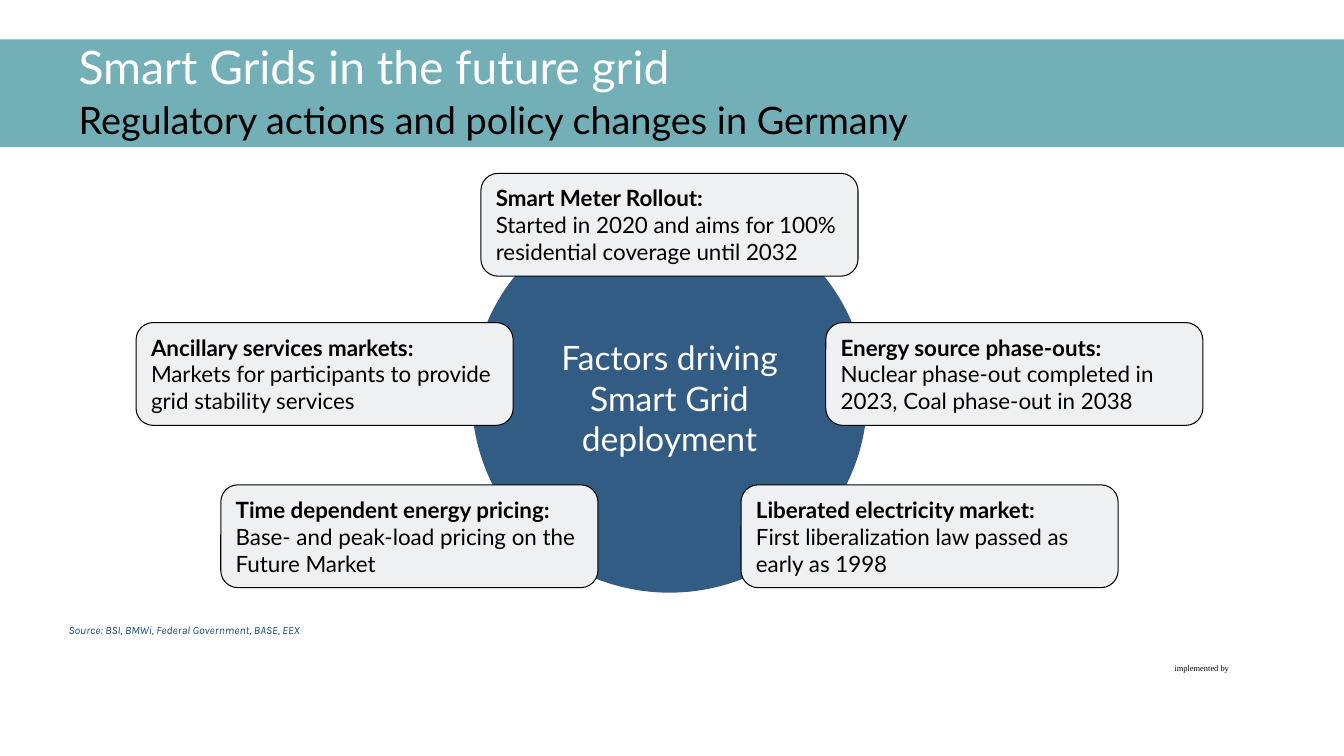
"""Build the slide on the factors driving Smart Grid deployment in Germany."""
import pptx
import pptx.dml.color
import pptx.enum.shapes
import pptx.enum.text
import pptx.util

Inches, Pt = pptx.util.Inches, pptx.util.Pt
SHAPES = pptx.enum.shapes.MSO_SHAPE
ALIGN = pptx.enum.text.PP_ALIGN
MIDDLE = pptx.enum.text.MSO_ANCHOR.MIDDLE
TOP = pptx.enum.text.MSO_ANCHOR.TOP

TITLE = "Smart Grids in the future grid"
SUBTITLE = "Regulatory actions and policy changes in Germany"
HUB = "Factors driving Smart Grid deployment"
SOURCE = "Source: BSI, BMWi, Federal Government, BASE, EEX"
FOOTER = "implemented by"

CENTER_X = 6.64
CARD_WIDTH, CARD_HEIGHT = 3.74, 1.02
CARDS = [
    (0, 1.72, "Smart Meter Rollout:",
     "Started in 2020 and aims for 100% residential coverage until 2032"),
    (2.58, 4.81, "Liberated electricity market:",
     "First liberalization law passed as early as 1998"),
    (-2.58, 4.81, "Time dependent energy pricing:",
     "Base- and peak-load pricing on the Future Market"),
    (-3.42, 3.2, "Ancillary services markets:",
     "Markets for participants to provide grid stability services"),
    (3.42, 3.2, "Energy source phase-outs:",
     "Nuclear phase-out completed in 2023, Coal phase-out in 2038"),
]


def color(value):
    return pptx.dml.color.RGBColor.from_string(value)


def format_font(font, size, ink, name="Lato", bold=False, italic=False):
    font.size, font.name = Pt(size), name
    font.bold, font.italic = bold, italic
    font.color.rgb = color(ink)


def add_block(slide, kind, left, top, width, height, fill, line=None):
    shape = slide.shapes.add_shape(
        kind, Inches(left), Inches(top), Inches(width), Inches(height))
    shape.shadow.inherit = False
    shape.fill.solid()
    shape.fill.fore_color.rgb = color(fill)
    if line:
        shape.line.color.rgb = color(line)
        shape.line.width = Pt(0.75)
    else:
        shape.line.fill.background()
    shape.text_frame.word_wrap = True
    shape.text_frame.vertical_anchor = MIDDLE
    return shape


def add_title(slide):
    title = slide.shapes.title
    title.left, title.top = Inches(0.68), Inches(0.39)
    title.width, title.height = Inches(10.16), Inches(1.07)
    frame = title.text_frame
    frame.text = f"{TITLE}\v{SUBTITLE}"
    frame.auto_size = pptx.enum.text.MSO_AUTO_SIZE.NONE
    frame.vertical_anchor = MIDDLE
    paragraph = frame.paragraphs[0]
    paragraph.alignment = ALIGN.LEFT
    paragraph.line_spacing = Pt(35)
    for run, size, ink in zip(paragraph.runs, (33, 27), ("FFFFFF", "000000")):
        format_font(run.font, size, ink)
    band = add_block(slide, SHAPES.RECTANGLE, 0, 0.39, 13.33, 1.07, "73AFB7")
    title.element.addprevious(band.element)


def add_hub(slide):
    hub = add_block(slide, SHAPES.OVAL, CENTER_X - 1.96, 2.01, 3.92, 3.87, "325C83")
    hub.text_frame.text = HUB
    paragraph = hub.text_frame.paragraphs[0]
    paragraph.alignment = ALIGN.CENTER
    format_font(paragraph.runs[0].font, 24, "FFFFFF")


def add_card(slide, offset, top, heading, detail):
    left = CENTER_X + offset - CARD_WIDTH / 2
    card = add_block(slide, SHAPES.ROUNDED_RECTANGLE, left, top,
                     CARD_WIDTH, CARD_HEIGHT, "EEF0F2", "000000")
    card.text_frame.text = f"{heading}\n{detail}"
    for paragraph, bold in zip(card.text_frame.paragraphs, (True, False)):
        paragraph.alignment = ALIGN.LEFT
        format_font(paragraph.runs[0].font, 16, "000000", bold=bold)


def add_note(slide, text, left, top, width, height, inset, wrap, anchor):
    box = slide.shapes.add_textbox(
        Inches(left), Inches(top), Inches(width), Inches(height))
    frame = box.text_frame
    frame.margin_left = frame.margin_right = 0
    frame.margin_top = frame.margin_bottom = Inches(inset)
    frame.word_wrap, frame.vertical_anchor = wrap, anchor
    frame.text = text
    return frame.paragraphs[0]


def main():
    presentation = pptx.Presentation()
    presentation.slide_width = Inches(13.33)
    presentation.slide_height = Inches(7.5)
    slide = presentation.slides.add_slide(presentation.slide_layouts[5])
    add_title(slide)
    add_hub(slide)
    for card in CARDS:
        add_card(slide, *card)
    source = add_note(slide, SOURCE, 0.68, 6.14, 11.71, 0.24, 0.05, True, MIDDLE)
    source.line_spacing = 0.9
    format_font(source.runs[0].font, 8, "194C80", "Karla", italic=True)
    footer = add_note(slide, FOOTER, 11.65, 6.58, 0.54, 0.1, 0, False, TOP)
    format_font(footer.runs[0].font, 6, "000000", "Times New Roman")
    presentation.save("out.pptx")


if __name__ == "__main__":
    main()
